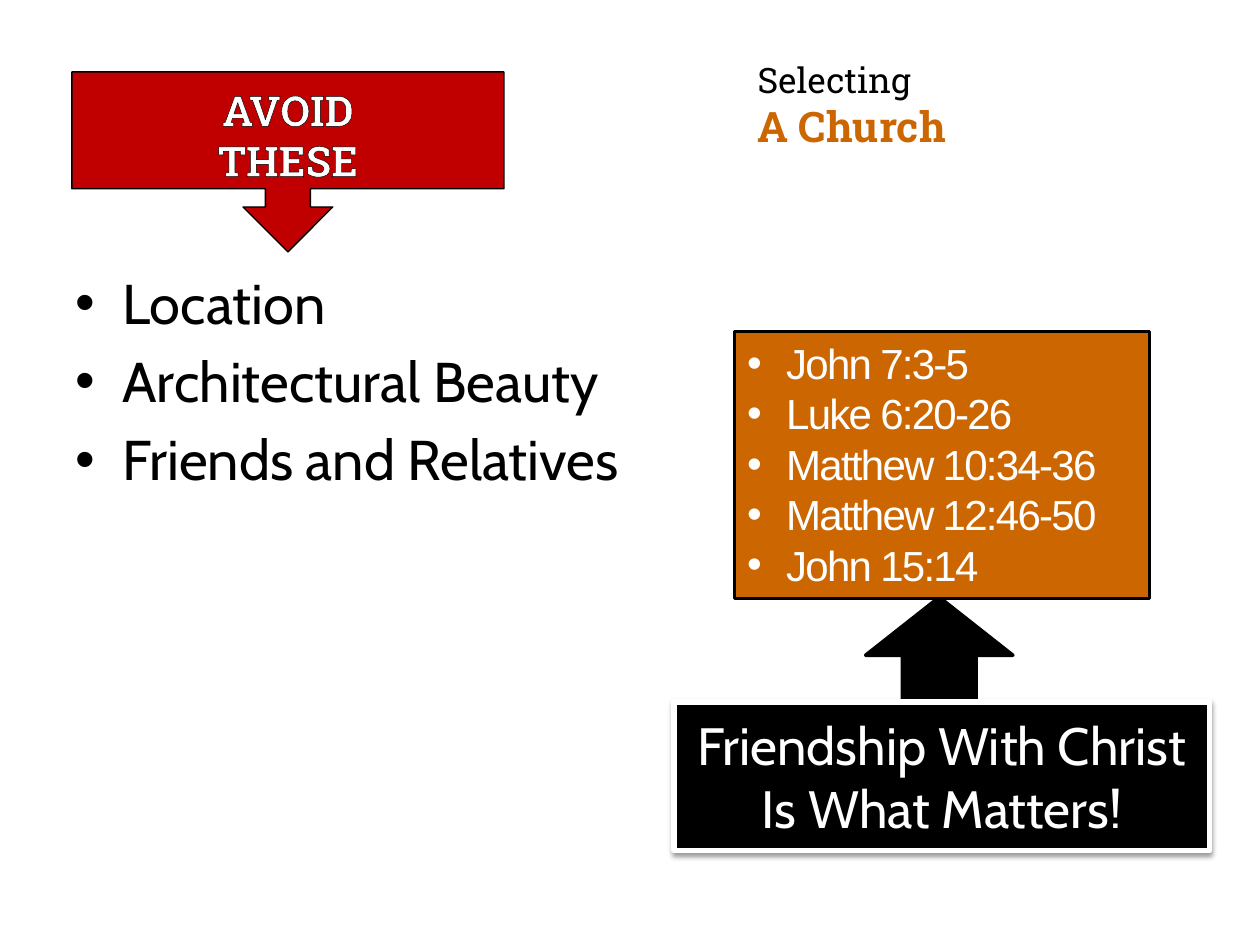
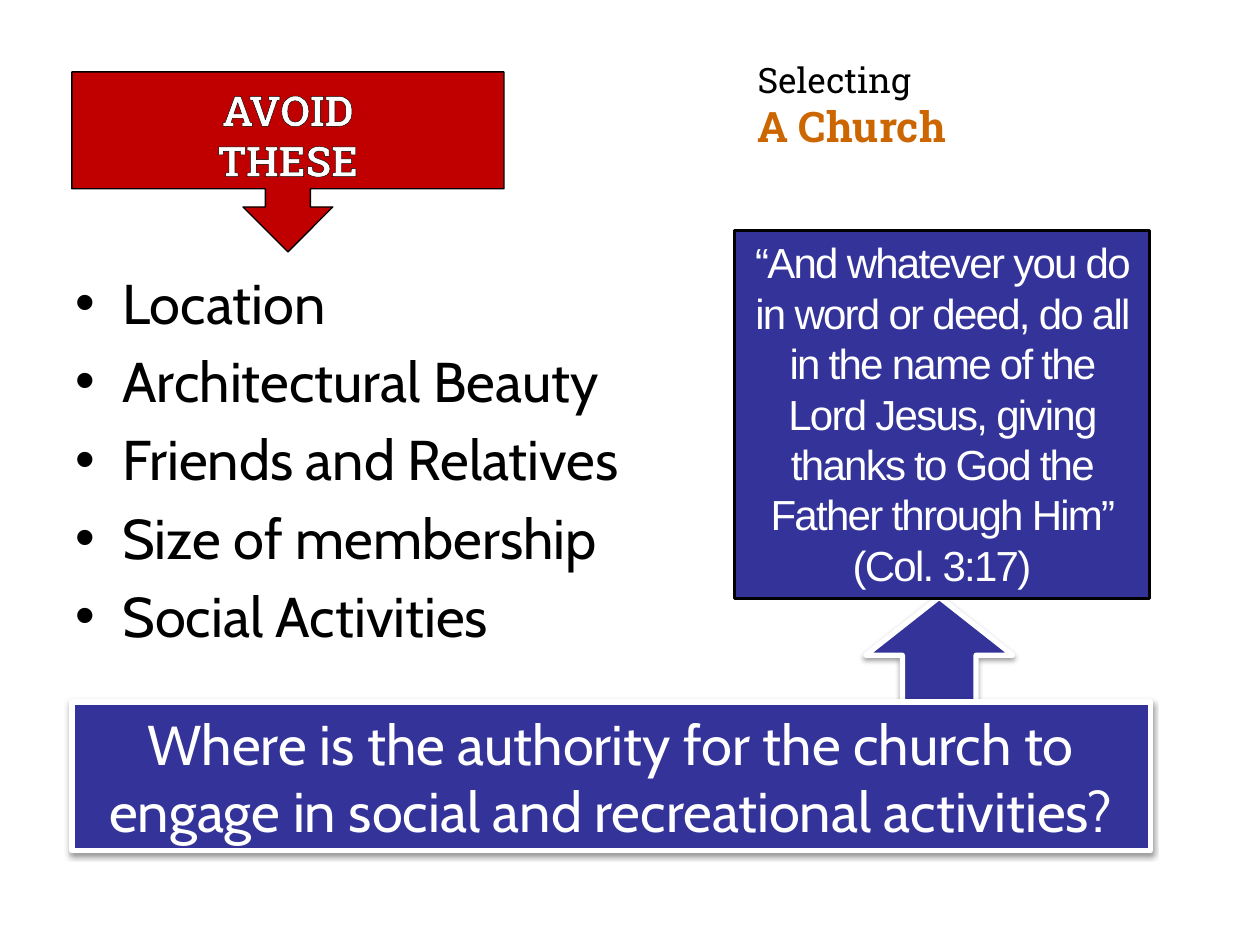
from lxml import etree
from pptx import Presentation
from pptx.dml.color import RGBColor
from pptx.enum import shapes, text
from pptx.oxml import ns
from pptx.util import Cm, Pt

COLORS = {
    "black": "000000",
    "white": "FFFFFF",
    "red": "C00000",
    "orange": "CC6600",
    "blue": "333399",
}
HEADING_FONT, BODY_FONT, VERSE_FONT = "Roboto Slab", "Cabin", "Arial"
TITLE_ONLY = 5

LEFT_MARGIN = 1.45
VERSES_LEFT, VERSES_WIDTH, VERSES_BOTTOM = 14.81, 8.36, 12.07
BANNER_TOP, BANNER_HEIGHT = 14.15, 3.0

REASONS = ["Location", "Architectural Beauty", "Friends and Relatives",
           "Size of membership", "Social Activities"]
FRIENDSHIP_VERSES = ["John 7:3-5", "Luke 6:20-26", "Matthew 10:34-36",
                     "Matthew 12:46-50", "John 15:14"]
AUTHORITY_VERSE = ("“And whatever you do in word or deed, do all in the name of "
                   "the Lord Jesus, giving thanks to God the Father through Him” "
                   "(Col. 3:17)")
AUTHORITY_QUESTION = ("Where is the authority for the church to engage in social "
                      "and recreational activities?")


def color(name):
    return RGBColor.from_string(COLORS[name])


def add_element(parent, tag, **attributes):
    return etree.SubElement(parent, ns.qn(tag), attributes)


def write_lines(shape, lines, font, size, color_name, bold=False, align=text.PP_ALIGN.LEFT):
    """Fill the shape with one paragraph per line and return the paragraphs."""
    frame = shape.text_frame
    frame.text = "\n".join(lines)
    frame.word_wrap = True
    frame.auto_size = text.MSO_AUTO_SIZE.NONE
    frame.vertical_anchor = text.MSO_ANCHOR.TOP
    for paragraph in frame.paragraphs:
        paragraph.alignment = align
        paragraph.font.name = font
        paragraph.font.size = Pt(size)
        paragraph.font.bold = bold
        paragraph.font.color.rgb = color(color_name)
    return frame.paragraphs


def add_bullet(paragraph, indent):
    properties = paragraph._p.get_or_add_pPr()
    properties.set("marL", str(Cm(indent)))
    properties.set("indent", str(-Cm(indent)))
    bullet_font = etree.Element(ns.qn("a:buFont"), typeface="Arial")
    bullet = etree.Element(ns.qn("a:buChar"), char="•")
    default_run = properties.find(ns.qn("a:defRPr"))
    default_run.addprevious(bullet_font)
    default_run.addprevious(bullet)


def outline_text(paragraph):
    for run in paragraph.runs:
        line = etree.Element(ns.qn("a:ln"), w=str(Pt(1)))
        fill = add_element(line, "a:solidFill")
        add_element(fill, "a:srgbClr", val=COLORS["black"])
        run._r.get_or_add_rPr().insert(0, line)


def tighten_text(paragraph):
    for run in paragraph.runs:
        run._r.get_or_add_rPr().set("spc", "-100")


def add_shadow(shape):
    effects = shape._element.spPr.find(ns.qn("a:effectLst"))
    shadow = add_element(effects, "a:outerShdw", blurRad=str(Pt(3.1)), dist=str(Pt(1.6)),
                         dir="5400000", rotWithShape="0")
    shade = add_element(shadow, "a:srgbClr", val=COLORS["black"])
    add_element(shade, "a:alpha", val="38000")


def add_filled_shape(slide, kind, box, fill, line, line_width):
    shape = slide.shapes.add_shape(kind, *map(Cm, box))
    shape.shadow.inherit = False
    shape.fill.solid()
    shape.fill.fore_color.rgb = color(fill)
    shape.line.color.rgb = color(line)
    shape.line.width = Pt(line_width)
    return shape


def set_title(slide):
    title = slide.shapes.title
    title.left, title.top, title.width, title.height = map(Cm, (15.02, 1.05, 10.01, 2.13))
    first, second = write_lines(title, ["Selecting", "A Church"], HEADING_FONT, 20, "black")
    second.font.size = Pt(24)
    second.font.bold = True
    second.font.color.rgb = color("orange")
    outline_text(second)


def add_reasons(slide, reasons):
    box = slide.shapes.add_textbox(Cm(1.27), Cm(5.28), Cm(22.86), Cm(12.5))
    for paragraph in write_lines(box, reasons, BODY_FONT, 32, "black"):
        paragraph.space_before = Pt(6.4)
        add_bullet(paragraph, 0.95)


def add_up_arrow(slide, fill, line, line_width):
    return add_filled_shape(slide, shapes.MSO_SHAPE.UP_ARROW, (17.45, 12.04, 2.97, 2.34),
                            fill, line, line_width)


def add_banner(slide, left, width, lines, fill, size):
    banner = add_filled_shape(slide, shapes.MSO_SHAPE.RECTANGLE,
                              (left, BANNER_TOP, width, BANNER_HEIGHT), fill, "white", 3)
    add_shadow(banner)
    write_lines(banner, lines, BODY_FONT, size, "white", align=text.PP_ALIGN.CENTER)
    frame = banner.text_frame
    frame.vertical_anchor = text.MSO_ANCHOR.MIDDLE
    frame.margin_left = frame.margin_right = Cm(0.1)


def add_verses(slide, top, lines, fill, align):
    box = (VERSES_LEFT, top, VERSES_WIDTH, VERSES_BOTTOM - top)
    panel = add_filled_shape(slide, shapes.MSO_SHAPE.RECTANGLE, box, fill, "black", 2)
    paragraphs = write_lines(panel, lines, VERSE_FONT, 24, "white", align=align)
    for paragraph in paragraphs:
        tighten_text(paragraph)
    return paragraphs


def add_avoid_callout(slide):
    callout = add_filled_shape(slide, shapes.MSO_SHAPE.DOWN_ARROW_CALLOUT,
                               (LEFT_MARGIN, 1.45, 8.71, 3.63), "red", "black", 0.75)
    frame = callout.text_frame
    frame.margin_left = frame.margin_right = Cm(0.51)
    frame.margin_top = frame.margin_bottom = Cm(0.25)
    for paragraph in write_lines(callout, ["AVOID", "THESE"], HEADING_FONT, 24, "white",
                                 bold=True, align=text.PP_ALIGN.CENTER):
        outline_text(paragraph)


def add_reasons_slide(presentation, reasons):
    """Add a slide with the title and the list that both slides share."""
    slide = presentation.slides.add_slide(presentation.slide_layouts[TITLE_ONLY])
    set_title(slide)
    add_reasons(slide, reasons)
    return slide


def build_friendship_slide(presentation):
    slide = add_reasons_slide(presentation, REASONS[:3])
    add_up_arrow(slide, "black", "black", 2)
    add_banner(slide, 13.59, 10.8, ["Friendship With Christ", "Is What Matters!"], "black", 30)
    for paragraph in add_verses(slide, 6.68, FRIENDSHIP_VERSES, "orange", text.PP_ALIGN.LEFT):
        add_bullet(paragraph, 0.79)
    add_avoid_callout(slide)


def build_authority_slide(presentation):
    slide = add_reasons_slide(presentation, REASONS)
    add_shadow(add_up_arrow(slide, "blue", "white", 3))
    add_banner(slide, LEFT_MARGIN, 21.74, [AUTHORITY_QUESTION], "blue", 32)
    add_verses(slide, 4.65, [AUTHORITY_VERSE], "blue", text.PP_ALIGN.CENTER)
    add_avoid_callout(slide)


def main():
    presentation = Presentation()
    presentation.slide_width, presentation.slide_height = Cm(25.4), Cm(19.05)
    build_friendship_slide(presentation)
    build_authority_slide(presentation)
    presentation.save("out.pptx")


if __name__ == "__main__":
    main()
